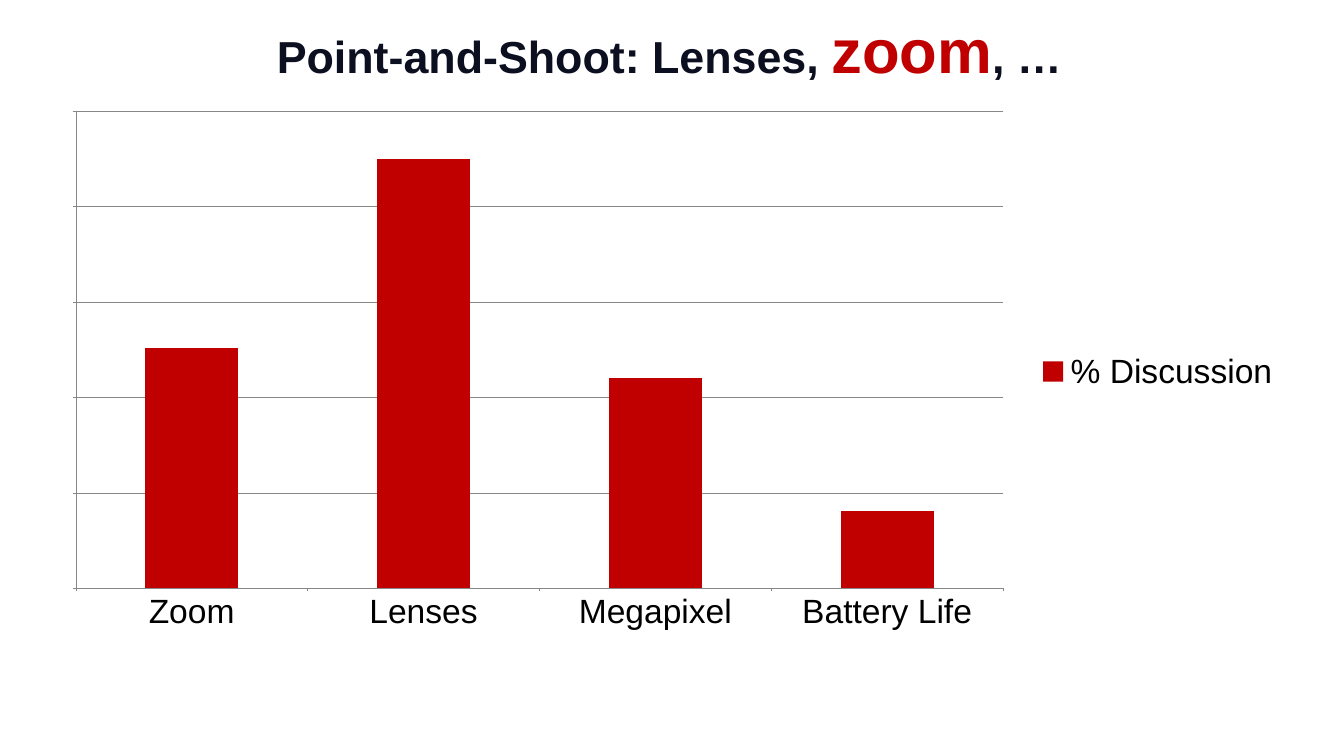
from lxml import etree
from pptx import Presentation
from pptx import util as u
from pptx.chart.data import CategoryChartData
from pptx.dml.color import RGBColor
from pptx.enum import chart as ch, text as tx

WIDE, HIGH = u.Inches(26.67), u.Inches(15)
RED, NAVY, BLACK, GREY = "C00000", "0C0F20", "000000", "878787"
FONT = "Arial"


def hue(code):
    return RGBColor.from_string(code)


def share(left, top, width, height):
    return [round(n) for n in (left * WIDE, top * HIGH, width * WIDE, height * HIGH)]


def place(shape, box):
    shape.left, shape.top, shape.width, shape.height = box


def style(font, size, code, bold=False):
    font.name, font.size, font.bold = FONT, u.Pt(size), bold
    font.color.rgb = hue(code)


def head(slide, box, parts):
    title = slide.shapes.title
    place(title, box)
    frame = title.text_frame
    frame.word_wrap = True
    frame.auto_size = tx.MSO_AUTO_SIZE.NONE
    frame.vertical_anchor = tx.MSO_ANCHOR.MIDDLE
    frame.margin_left = frame.margin_right = u.Inches(0.06)
    frame.margin_top = frame.margin_bottom = u.Inches(0.06)
    line = frame.paragraphs[0]
    line.alignment = tx.PP_ALIGN.CENTER
    for words, size, code in parts:
        run = line.add_run()
        run.text = words
        style(run.font, size, code, True)


def inset(chart, **sizes):
    plot = chart._chartSpace.chart.plotArea
    space = plot.nsmap["c"]
    for old in plot.findall(f"{{{space}}}layout"):
        plot.remove(old)
    layout = etree.Element(f"{{{space}}}layout")
    manual = etree.SubElement(layout, f"{{{space}}}manualLayout")
    modes = {"layoutTarget": "inner", "xMode": "edge", "yMode": "edge"}
    for tag, val in {**modes, **sizes}.items():
        etree.SubElement(manual, f"{{{space}}}{tag}", val=str(val))
    plot.insert(0, layout)


def bars(slide, box, name, points):
    data = CategoryChartData()
    data.categories = list(points)
    data.add_series(name, list(points.values()))
    chart = slide.shapes.add_chart(ch.XL_CHART_TYPE.COLUMN_CLUSTERED, *box, data).chart
    style(chart.font, 48, BLACK)
    chart.has_title = False
    chart.has_legend = True
    chart.legend.position = ch.XL_LEGEND_POSITION.RIGHT
    chart.legend.include_in_layout = False
    plot = chart.plots[0]
    plot.vary_by_categories = False
    plot.gap_width = 150
    fill = plot.series[0].format.fill
    fill.solid()
    fill.fore_color.rgb = hue(RED)
    cats, vals = chart.category_axis, chart.value_axis
    vals.minimum_scale, vals.maximum_scale, vals.major_unit = 0, 111, 22.2
    vals.tick_label_position = ch.XL_TICK_LABEL_POSITION.NONE
    vals.has_major_gridlines = True
    for axis in (cats, vals):
        axis.major_tick_mark = ch.XL_TICK_MARK.OUTSIDE
    for part in (cats, vals, vals.major_gridlines):
        part.format.line.color.rgb = hue(GREY)
        part.format.line.width = u.Pt(0.75)
    inset(chart, x=0.02, y=0.02, w=0.75, h=0.88)


def main():
    deck = Presentation()
    deck.slide_width, deck.slide_height = WIDE, HIGH
    slide = deck.slides.add_slide(deck.slide_layouts[5])
    left, width = 0.038, 0.92
    head(slide, share(left, 0, width, 0.129), [
        ("Point-and-Shoot: Lenses, ", 64, NAVY),
        ("zoom", 88, RED),
        (", …", 64, NAVY),
    ])
    bars(slide, share(left, 0.133, width, 0.717), "% Discussion",
         {"Zoom": 56, "Lenses": 100, "Megapixel": 49, "Battery Life": 18})
    deck.save("out.pptx")


if __name__ == "__main__":
    main()
